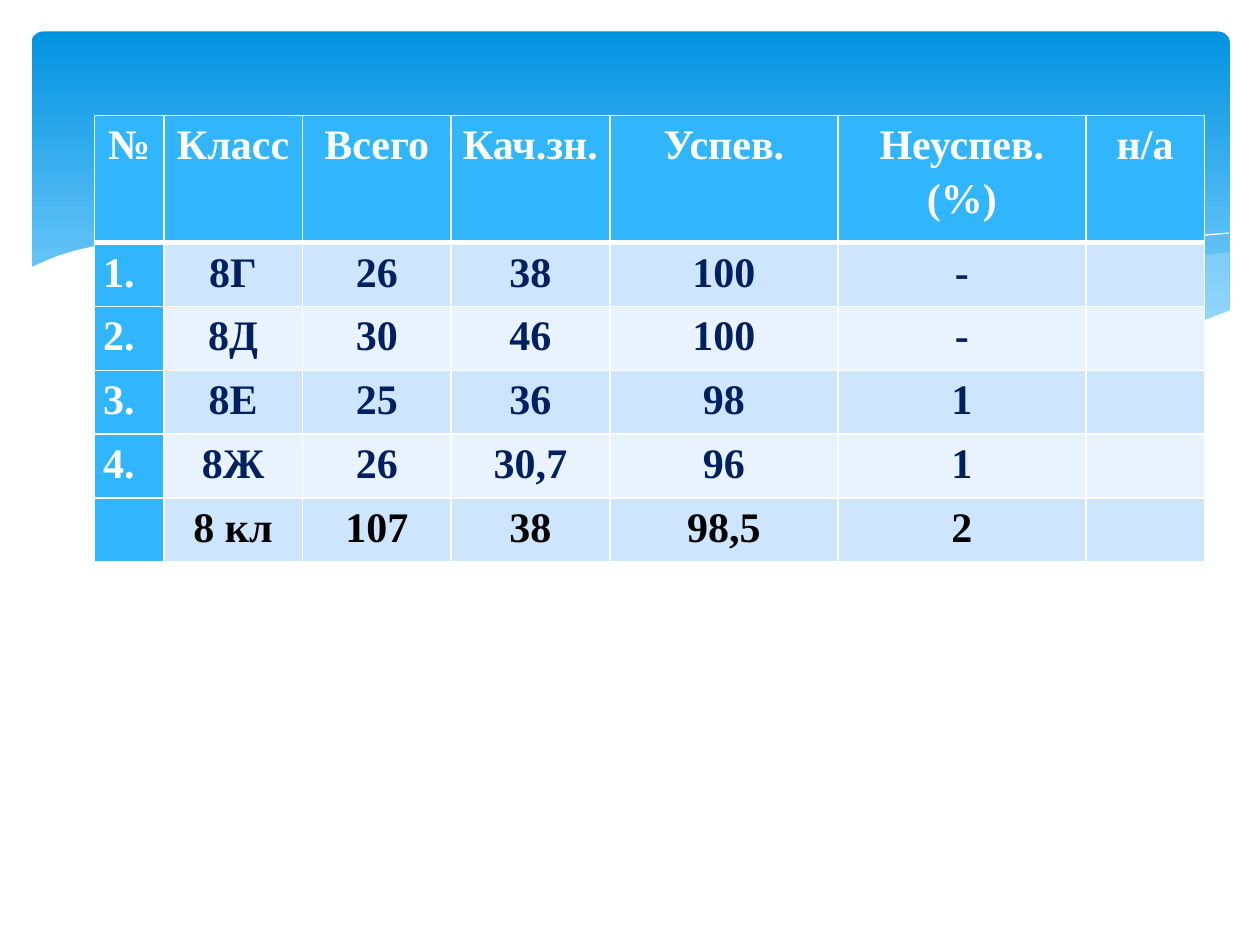
from lxml.etree import SubElement
from pptx import Presentation
from pptx.dml.color import RGBColor
from pptx.enum.shapes import MSO_SHAPE as Shape
from pptx.enum.text import PP_ALIGN as Align
from pptx.oxml.ns import qn
from pptx.util import Pt

WHITE = RGBColor(0xFF, 0xFF, 0xFF)
BLACK = RGBColor(0, 0, 0)
NAVY = RGBColor(0x00, 0x20, 0x60)
DEEP = RGBColor(0x02, 0x93, 0xE0)
SKY = RGBColor(0x83, 0xD3, 0xFE)
MIST = RGBColor(0xC6, 0xE7, 0xFC)
BLUE = RGBColor(0x31, 0xB6, 0xFD)
BANDS = [RGBColor(0xE8, 0xF3, 0xFF), RGBColor(0xCE, 0xE5, 0xFE)]
FONT = "Times New Roman"


def draw_wave(dots, color, alpha=100, closed=True):
    """Filled wave, or a white hairline if open; dots are in 1/100 inch."""
    pen = shapes.build_freeform(*dots[0], scale=Pt(0.72))
    pen.add_line_segments(dots[1:], close=closed)
    wave = pen.convert_to_shape()
    wave.shadow.inherit = False
    if not closed:
        wave.fill.background()
        wave.line.color.rgb = color
        wave.line.width = Pt(0)
        return
    wave.fill.solid()
    wave.fill.fore_color.rgb = color
    wave.line.fill.background()
    if alpha < 100:
        tint = wave.fill._xPr.find(qn("a:solidFill"))[0]
        SubElement(tint, qn("a:alpha"), val=str(alpha * 1000))


def add_edge(cell, side, width):
    edge = SubElement(cell._tc.get_or_add_tcPr(), qn("a:ln" + side), w=str(Pt(width)))
    fill = SubElement(edge, qn("a:solidFill"))
    SubElement(fill, qn("a:srgbClr"), val=str(WHITE))


prs = Presentation()
prs.slide_width, prs.slide_height = Pt(720), Pt(540)
slide = prs.slides.add_slide(prs.slide_layouts[6])
shapes = slide.shapes

# Banner
banner = shapes.add_shape(Shape.ROUNDED_RECTANGLE, Pt(18), Pt(18), Pt(684.7), Pt(194.4))
banner.adjustments[0] = 0.034
banner.shadow.inherit = False
banner.line.fill.background()
banner.fill.gradient()
banner.fill.gradient_angle = 270
for stop, color, place in zip(banner.fill.gradient_stops, (DEEP, SKY), (0, 0.9)):
    stop.color.rgb = color
    stop.position = place

# Waves
draw_wave([(975, 200), (948, 204), (921, 210), (891, 216), (861, 223), (805, 237),
           (753, 248), (706, 257), (661, 265), (691, 269), (719, 272), (745, 275),
           (769, 277), (803, 278), (835, 277), (863, 275), (889, 272), (913, 267),
           (935, 262), (949, 257), (963, 252), (976, 247), (976, 200)], MIST, 29)
draw_wave([(893, 273), (866, 269), (807, 260), (741, 247), (668, 231), (629, 222),
           (598, 214), (569, 208), (541, 203), (514, 198), (489, 194), (442, 189),
           (399, 186), (361, 185), (328, 187), (299, 189), (286, 191), (323, 196),
           (362, 203), (404, 211), (449, 222), (530, 240), (584, 252), (634, 261),
           (680, 268), (722, 274), (761, 277), (796, 278), (828, 278), (867, 276)],
          MIST, 40)
draw_wave([(309, 195), (328, 192), (353, 189), (387, 187), (433, 187), (469, 189),
           (510, 192), (556, 197), (608, 204), (665, 213), (727, 226), (795, 241),
           (869, 261), (907, 272)], WHITE, closed=False)
draw_wave([(613, 257), (653, 246), (695, 235), (748, 223), (806, 210), (866, 199),
           (895, 194), (924, 190), (951, 187), (975, 185)], WHITE, closed=False)
draw_wave([(977, 246), (959, 253), (940, 259), (920, 265), (899, 269), (875, 273),
           (850, 275), (823, 277), (793, 276), (761, 275), (726, 272), (688, 268),
           (648, 262), (603, 254), (555, 245), (503, 233), (447, 220), (391, 207),
           (340, 197), (292, 190), (250, 186), (211, 184), (177, 184), (146, 185),
           (119, 187), (95, 191), (76, 195), (59, 199), (46, 203), (36, 207),
           (23, 213), (23, 329), (977, 329)], WHITE)

# Results table
rows = [
    ["№", "Класс", "Всего", "Кач.зн.", "Успев.", "Неуспев.\n(%)", "н/а"],
    ["1.", "8Г", "26", "38", "100", "-", ""],
    ["2.", "8Д", "30", "46", "100", "-", ""],
    ["3.", "8Е", "25", "36", "98", "1", ""],
    ["4.", "8Ж", "26", "30,7", "96", "1", ""],
    ["", "8 кл", "107", "38", "98,5", "2", ""],
]
widths = [39.6, 79.2, 85, 90.7, 130.3, 141.8, 67.7]
heights = [72.7] + [36.5] * 5
last = len(rows) - 1
table = shapes.add_table(len(rows), len(widths), Pt(54), Pt(66),
                         Pt(sum(widths)), Pt(sum(heights))).table
for col, width in zip(table.columns, widths):
    col.width = Pt(width)
for row, height in zip(table.rows, heights):
    row.height = Pt(height)

for r, row in enumerate(rows):
    for c, text in enumerate(row):
        cell = table.cell(r, c)
        cell.margin_left = cell.margin_right = Pt(5)
        cell.margin_top = cell.margin_bottom = Pt(0)
        add_edge(cell, "L", 1)
        add_edge(cell, "R", 1)
        add_edge(cell, "T", 3 if r == 1 else 1)
        add_edge(cell, "B", 3 if r == 0 else 1)
        head = r == 0 or c == 0
        cell.fill.solid()
        cell.fill.fore_color.rgb = BLUE if head else BANDS[r % 2]
        if not text:
            continue
        for i, line in enumerate(text.split("\n")):
            frame = cell.text_frame
            para = frame.add_paragraph() if i else frame.paragraphs[0]
            para.line_spacing = 1.15
            para.alignment = Align.LEFT if c == 0 and r else Align.CENTER
            run = para.add_run()
            run.text = line
            run.font.name, run.font.size, run.font.bold = FONT, Pt(24), True
            run.font.color.rgb = WHITE if head else BLACK if r == last else NAVY

prs.save("out.pptx")
